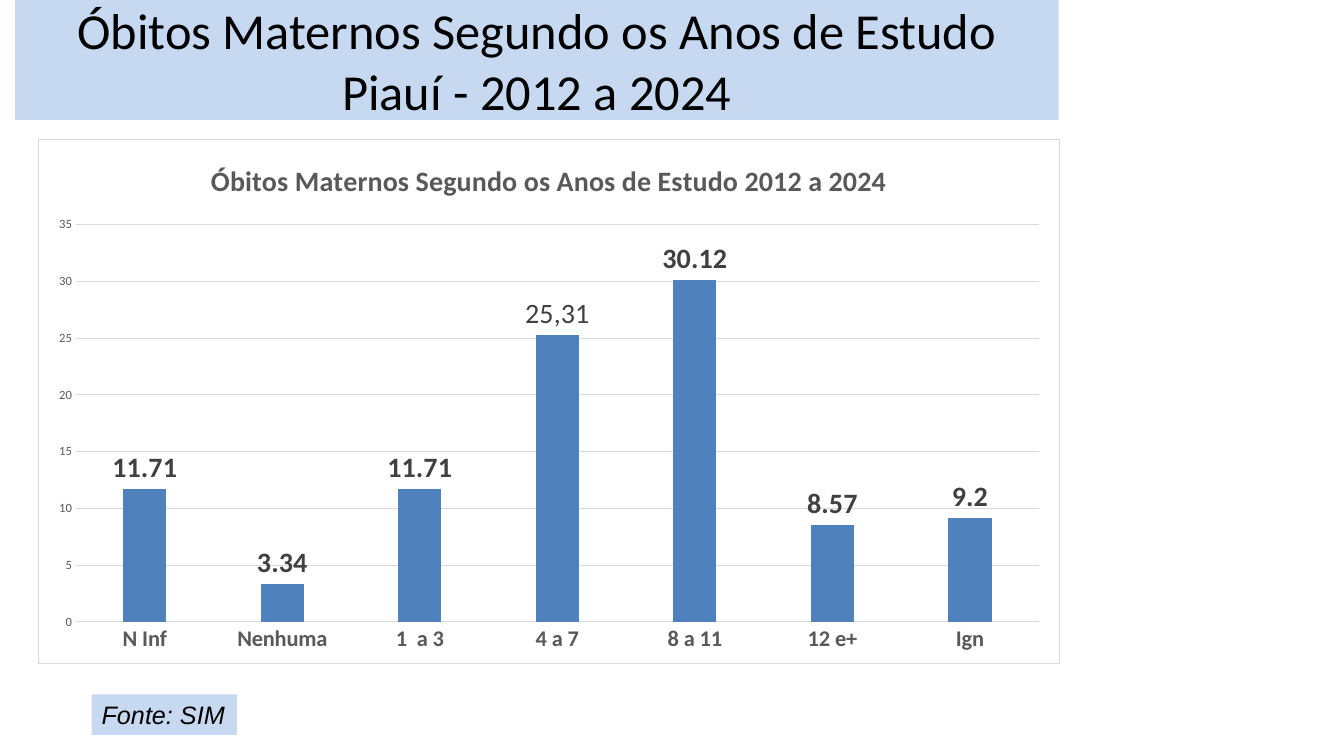
from dataclasses import dataclass

from lxml import etree
from pptx import Presentation, util as u
from pptx.chart.data import CategoryChartData
from pptx.dml.color import RGBColor
from pptx.enum import chart as ch, text as tx


@dataclass(frozen=True)
class Theme:
    """Colours, fonts and type sizes of the slide."""
    band: str = "C6D9F1"
    bar: str = "4F81BD"
    rule: str = "D9D9D9"
    paper: str = "FFFFFF"
    ink: str = "000000"
    grey: str = "595959"
    dark: str = "404040"
    sans: str = "Calibri"
    note: str = "Arial"
    head: int = 36
    large: int = 20
    source: int = 18
    label: int = 16
    base: int = 10
    tick: int = 9


T = Theme()
DATA = {"N Inf": 11.71, "Nenhuma": 3.34, "1  a 3": 11.71, "4 a 7": 25.31,
        "8 a 11": 30.12, "12 e+": 8.57, "Ign": 9.2}


def style(font, size, color=T.ink, name=T.sans, bold=False, italic=False):
    """Format a font."""
    font.size, font.name = u.Pt(size), name
    font.bold, font.italic = bold, italic
    font.color.rgb = RGBColor.from_string(color)


def write(frame, words, align=tx.PP_ALIGN.CENTER, **kw):
    """Put formatted text in a frame."""
    frame.text = words
    for para in frame.paragraphs:
        para.alignment = align
        for run in para.runs:
            style(run.font, **kw)


def stroke(line, color=T.rule):
    """Draw a thin line."""
    line.color.rgb = RGBColor.from_string(color)
    line.width = u.Pt(0.75)


def panel(slide, box, words, wrap=True, **kw):
    """Place text on a tinted band filling the box."""
    shape = slide.shapes.add_textbox(*map(u.Inches, box))
    shape.fill.solid()
    shape.fill.fore_color.rgb = RGBColor.from_string(T.band)
    frame = shape.text_frame
    frame.word_wrap = wrap
    frame.vertical_anchor = tx.MSO_ANCHOR.MIDDLE
    write(frame, words, **kw)


def frame_chart(chart):
    """Fill and outline the chart area."""
    space = chart.element
    ns = space.nsmap
    part = etree.fromstring(
        f'<c:spPr xmlns:c="{ns["c"]}" xmlns:a="{ns["a"]}">'
        f'<a:solidFill><a:srgbClr val="{T.paper}"/></a:solidFill>'
        f'<a:ln w="9525"><a:solidFill><a:srgbClr val="{T.rule}"/>'
        '</a:solidFill></a:ln></c:spPr>')
    space.find("c:chart", ns).addnext(part)


def set_axes(chart):
    """Format both axes and the grid."""
    cat, val = chart.category_axis, chart.value_axis
    for axis in (cat, val):
        axis.major_tick_mark = axis.minor_tick_mark = ch.XL_TICK_MARK.NONE
    style(cat.tick_labels.font, T.label, T.grey, bold=True)
    style(val.tick_labels.font, T.tick, T.grey)
    stroke(cat.format.line)
    stroke(val.major_gridlines.format.line)
    val.format.line.fill.background()
    val.minimum_scale, val.maximum_scale, val.major_unit = 0, 35, 5


def set_bars(plot):
    """Format the columns and their labels."""
    plot.gap_width, plot.overlap = 219, -27
    plot.vary_by_categories = False
    bars = plot.series[0]
    bars.format.fill.solid()
    bars.format.fill.fore_color.rgb = RGBColor.from_string(T.bar)
    labels = bars.data_labels
    labels.show_value = True
    labels.number_format, labels.number_format_is_linked = "General", False
    labels.position = ch.XL_LABEL_POSITION.OUTSIDE_END
    style(labels.font, T.large, T.dark, bold=True)
    custom = bars.points[3].data_label
    write(custom.text_frame, "25,31", size=T.large, color=T.dark)
    custom.position = ch.XL_LABEL_POSITION.OUTSIDE_END


def column_chart(slide, box):
    """Place the column chart in the box."""
    data = CategoryChartData()
    data.categories = list(DATA)
    data.add_series("Series 1", list(DATA.values()))
    chart = slide.shapes.add_chart(
        ch.XL_CHART_TYPE.COLUMN_CLUSTERED, *map(u.Inches, box), data).chart
    style(chart.font, T.base)
    chart.has_legend = False
    write(chart.chart_title.text_frame,
          "Óbitos Maternos Segundo os Anos de Estudo 2012 a 2024",
          size=T.large, color=T.grey, bold=True)
    chart.chart_title.include_in_layout = False
    set_axes(chart)
    set_bars(chart.plots[0])
    frame_chart(chart)


def main():
    """Build and save the slide."""
    deck = Presentation()
    deck.slide_width, deck.slide_height = u.Inches(13.33), u.Inches(7.5)
    slide = deck.slides.add_slide(deck.slide_layouts[6])
    panel(slide, (0.15, 0, 10.35, 1.19),
          "Óbitos Maternos Segundo os Anos de Estudo\nPiauí - 2012 a 2024",
          size=T.head)
    panel(slide, (0.91, 6.89, 1.44, 0.4), "Fonte: SIM", wrap=False,
          align=tx.PP_ALIGN.JUSTIFY, size=T.source, name=T.note, italic=True)
    column_chart(slide, (0.38, 1.38, 10.13, 5.21))
    deck.save("out.pptx")


if __name__ == "__main__":
    main()
